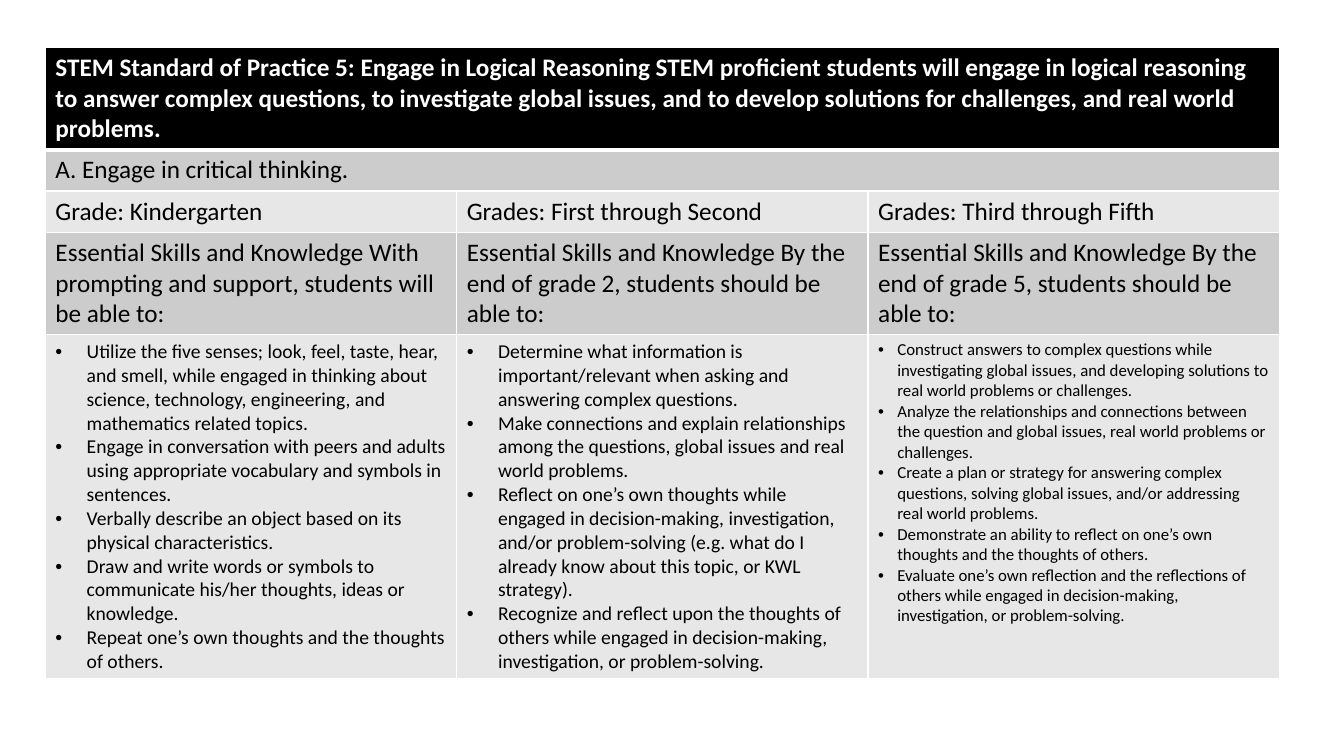
from dataclasses import dataclass

from lxml import etree
from pptx import Presentation
from pptx.dml.color import RGBColor
from pptx.oxml.ns import qn
from pptx.table import Table, _Cell
from pptx.util import Inches, Pt

COLORS = {
    "heading": "000000",
    "dark_band": "CCCCCC",
    "light_band": "E7E7E7",
    "border": "FFFFFF",
    "heading_text": "FFFFFF",
    "text": "000000",
}
FONT = "Calibri"
BLANK_LAYOUT = 6
COLUMN_WIDTH = 4.08
THIN_BORDER, THICK_BORDER = 1, 3


@dataclass
class GradeBand:
    grades: str
    prompt: str
    skills: list[str]
    skill_size: int
    skill_indent: float


@dataclass
class RowStyle:
    height: float
    fill: str
    text_color: str = "text"
    bold: bool = False
    merged: bool = False
    top_border: int = THIN_BORDER
    bottom_border: int = THIN_BORDER


ROW_STYLES = [
    RowStyle(1.01, "heading", "heading_text", bold=True, merged=True,
             bottom_border=THICK_BORDER),
    RowStyle(0.41, "dark_band", merged=True, top_border=THICK_BORDER),
    RowStyle(0.41, "light_band"),
    RowStyle(1.01, "dark_band"),
    RowStyle(3.41, "light_band"),
]

STANDARD = (
    "STEM Standard of Practice 5: Engage in Logical Reasoning STEM proficient "
    "students will engage in logical reasoning to answer complex questions, to "
    "investigate global issues, and to develop solutions for challenges, and "
    "real world problems."
)
PRACTICE = "A. Engage in critical thinking."

GRADE_BANDS = [
    GradeBand(
        "Grade: Kindergarten",
        "Essential Skills and Knowledge With prompting and support, students "
        "will be able to:",
        [
            "Utilize the five senses; look, feel, taste, hear, and smell, while "
            "engaged in thinking about science, technology, engineering, and "
            "mathematics related topics.",
            "Engage in conversation with peers and adults using appropriate "
            "vocabulary and symbols in sentences.",
            "Verbally describe an object based on its physical characteristics.",
            "Draw and write words or symbols to communicate his/her thoughts, "
            "ideas or knowledge.",
            "Repeat one’s own thoughts and the thoughts of others.",
        ],
        skill_size=14,
        skill_indent=0.31,
    ),
    GradeBand(
        "Grades: First through Second",
        "Essential Skills and Knowledge By the end of grade 2, students should "
        "be able to:",
        [
            "Determine what information is important/relevant when asking and "
            "answering complex questions.",
            "Make connections and explain relationships among the questions, "
            "global issues and real world problems.",
            "Reflect on one’s own thoughts while engaged in decision-making, "
            "investigation, and/or problem-solving (e.g. what do I already know "
            "about this topic, or KWL strategy).",
            "Recognize and reflect upon the thoughts of others while engaged in "
            "decision-making, investigation, or problem-solving.",
        ],
        skill_size=14,
        skill_indent=0.31,
    ),
    GradeBand(
        "Grades: Third through Fifth",
        "Essential Skills and Knowledge By the end of grade 5, students should "
        "be able to:",
        [
            "Construct answers to complex questions while investigating global "
            "issues, and developing solutions to real world problems or "
            "challenges.",
            "Analyze the relationships and connections between the question and "
            "global issues, real world problems or challenges.",
            "Create a plan or strategy for answering complex questions, solving "
            "global issues, and/or addressing real world problems.",
            "Demonstrate an ability to reflect on one’s own thoughts and the "
            "thoughts of others.",
            "Evaluate one’s own reflection and the reflections of others while "
            "engaged in decision-making, investigation, or problem-solving.",
        ],
        skill_size=12,
        skill_indent=0.19,
    ),
]


def rgb(name: str) -> RGBColor:
    return RGBColor.from_string(COLORS[name])


def set_borders(cell: _Cell, top: int, bottom: int) -> None:
    """Put the border lines ahead of the fill, as the schema requires."""
    properties = cell._tc.get_or_add_tcPr()
    widths = {"a:lnL": THIN_BORDER, "a:lnR": THIN_BORDER,
              "a:lnT": top, "a:lnB": bottom}
    for position, (tag, width) in enumerate(widths.items()):
        line = etree.Element(qn(tag), w=str(Pt(width)))
        fill = etree.SubElement(line, qn("a:solidFill"))
        etree.SubElement(fill, qn("a:srgbClr"), val=COLORS["border"])
        properties.insert(position, line)


def style_row(table: Table, row: int, style: RowStyle) -> None:
    table.rows[row].height = Inches(style.height)
    for cell in table.rows[row].cells:
        cell.fill.solid()
        cell.fill.fore_color.rgb = rgb(style.fill)
        set_borders(cell, style.top_border, style.bottom_border)
    if style.merged:
        table.cell(row, 0).merge(table.cell(row, len(table.columns) - 1))


def write_cell(cell: _Cell, paragraphs: list[str], style: RowStyle,
               size: int = 18, bullet_indent: float = 0) -> None:
    """Fill a cell; a nonzero indent turns its paragraphs into bullets."""
    cell.text = "\n".join(paragraphs)
    for paragraph in cell.text_frame.paragraphs:
        paragraph.font.name = FONT
        paragraph.font.size = Pt(size)
        paragraph.font.bold = style.bold
        paragraph.font.color.rgb = rgb(style.text_color)
        if bullet_indent:
            properties = paragraph._p.get_or_add_pPr()
            properties.set("marL", str(Inches(bullet_indent)))
            properties.set("indent", str(-Inches(bullet_indent)))
            bullet_font = etree.Element(qn("a:buFont"), typeface="Arial")
            bullet = etree.Element(qn("a:buChar"), char="•")
            properties.insert(0, bullet_font)
            properties.insert(1, bullet)


def main() -> None:
    presentation = Presentation()
    presentation.slide_width = Inches(13.33)
    presentation.slide_height = Inches(7.5)
    slide = presentation.slides.add_slide(presentation.slide_layouts[BLANK_LAYOUT])

    table = slide.shapes.add_table(
        len(ROW_STYLES), len(GRADE_BANDS), Inches(0.45), Inches(0.47),
        Inches(COLUMN_WIDTH * len(GRADE_BANDS)),
        Inches(sum(style.height for style in ROW_STYLES)),
    ).table
    for row, style in enumerate(ROW_STYLES):
        style_row(table, row, style)

    heading, practice, grades, prompt, skills = ROW_STYLES
    write_cell(table.cell(0, 0), [STANDARD], heading)
    write_cell(table.cell(1, 0), [PRACTICE], practice)
    for column, band in enumerate(GRADE_BANDS):
        table.columns[column].width = Inches(COLUMN_WIDTH)
        write_cell(table.cell(2, column), [band.grades], grades)
        write_cell(table.cell(3, column), [band.prompt], prompt)
        write_cell(table.cell(4, column), band.skills, skills,
                   band.skill_size, band.skill_indent)

    presentation.save("out.pptx")


if __name__ == "__main__":
    main()
